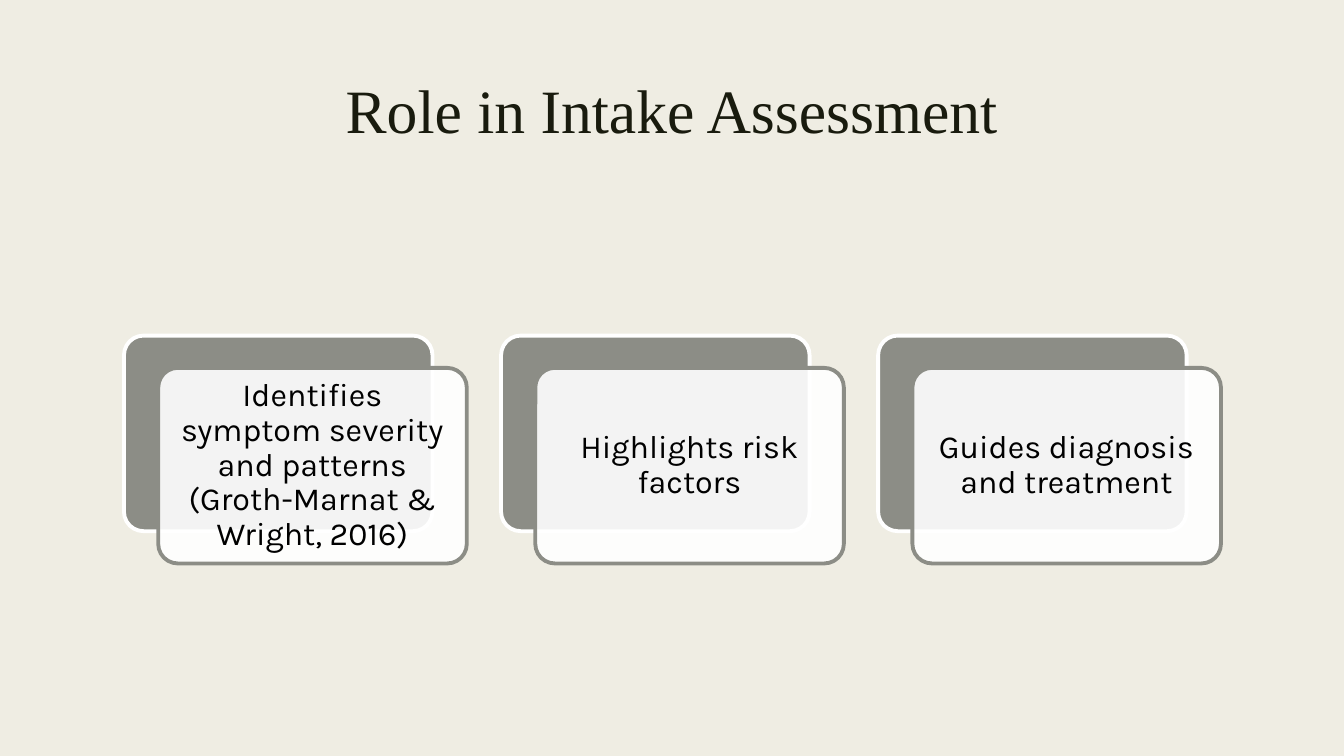
from dataclasses import dataclass

from lxml.etree import SubElement
from pptx import Presentation
from pptx.dml.color import RGBColor
from pptx.enum.shapes import MSO_SHAPE
from pptx.enum.text import MSO_ANCHOR, PP_ALIGN
from pptx.oxml.ns import qn
from pptx.shapes.autoshape import Shape
from pptx.slide import Slide
from pptx.text.text import TextFrame
from pptx.util import Emu, Pt

EMU_PER_PX = 9144  # 100 px to the inch
COLORS = {
    "background": "EFEDE3",
    "title": "191B0E",
    "accent": "8C8D86",
    "white": "FFFFFF",
    "text": "000000",
}
CARD_WIDTH, CARD_HEIGHT = 306, 194
FIRST_LEFT, CARD_TOP, CARD_PITCH = 123, 333, 374
FRONT_SHIFT_X, FRONT_SHIFT_Y = 34, 32


@dataclass(frozen=True)
class TextStyle:
    font: str
    size: float
    color: str
    line_spacing: float


TITLE_STYLE = TextStyle("Times New Roman", 44, "title", 0.89)
ROLE_STYLE = TextStyle("Karla", 23, "text", 0.9)
ROLES = [
    "Identifies symptom severity and patterns (Groth-Marnat & Wright, 2016)",
    "Highlights risk factors",
    "Guides diagnosis and treatment",
]


def px(length: int) -> Emu:
    return Emu(length * EMU_PER_PX)


def rgb(name: str) -> RGBColor:
    return RGBColor.from_string(COLORS[name])


def write_text(frame: TextFrame, text: str, style: TextStyle) -> None:
    frame.word_wrap = True
    paragraph = frame.paragraphs[0]
    paragraph.text = text
    paragraph.alignment = PP_ALIGN.CENTER
    paragraph.line_spacing = style.line_spacing
    paragraph.font.name = style.font
    paragraph.font.size = Pt(style.size)
    paragraph.font.color.rgb = rgb(style.color)


def add_card(slide: Slide, left: int, top: int, fill: str, line: str) -> Shape:
    card = slide.shapes.add_shape(
        MSO_SHAPE.ROUNDED_RECTANGLE, px(left), px(top), px(CARD_WIDTH), px(CARD_HEIGHT)
    )
    card.adjustments[0] = 0.1
    card.shadow.inherit = False
    card.fill.solid()
    card.fill.fore_color.rgb = rgb(fill)
    card.line.color.rgb = rgb(line)
    card.line.width = Pt(2.75)
    return card


def set_opacity(card: Shape, percent: int) -> None:
    color = card.fill._xPr.find(qn("a:solidFill"))[0]
    SubElement(color, qn("a:alpha"), val=str(percent * 1000))


def add_role(slide: Slide, left: int, role: str) -> None:
    """Draw a solid card with a translucent text card offset over it."""
    add_card(slide, left, CARD_TOP, "accent", "white")
    front = add_card(
        slide, left + FRONT_SHIFT_X, CARD_TOP + FRONT_SHIFT_Y, "white", "accent"
    )
    set_opacity(front, 90)
    frame = front.text_frame
    frame.margin_left = frame.margin_right = px(10)
    frame.margin_top = frame.margin_bottom = px(10)
    frame.vertical_anchor = MSO_ANCHOR.MIDDLE
    write_text(frame, role, ROLE_STYLE)


def main() -> None:
    presentation = Presentation()
    presentation.slide_width, presentation.slide_height = px(1333), px(750)
    slide = presentation.slides.add_slide(presentation.slide_layouts[6])
    slide.background.fill.solid()
    slide.background.fill.fore_color.rgb = rgb("background")

    title = slide.shapes.add_textbox(px(70), px(75), px(1193), px(162))
    write_text(title.text_frame, "Role in Intake Assessment", TITLE_STYLE)
    for index, role in enumerate(ROLES):
        add_role(slide, FIRST_LEFT + index * CARD_PITCH, role)

    presentation.save("out.pptx")


if __name__ == "__main__":
    main()
